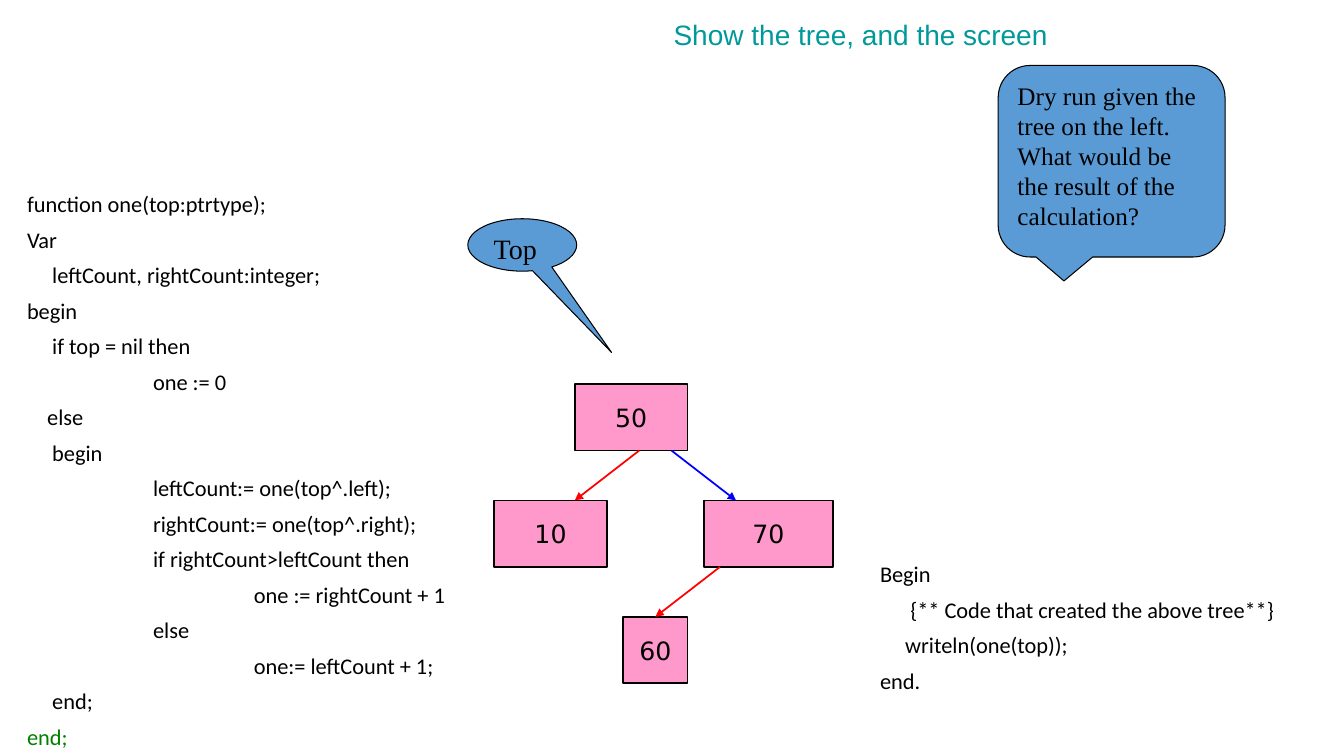
"""Builds a slide that asks for a dry run of a recursive tree function."""
from pptx import Presentation, util as u
from pptx.dml.color import RGBColor
from pptx.enum import shapes, text
from pptx.oxml import parse_xml
from pptx.oxml.ns import nsdecls

HUES = {"ink": "000000", "teal": "009999", "green": "008000", "sky": "5B9BD5",
        "pink": "FF99CC", "red": "FF0000", "blue": "0000FF"}
COL, ROW = 0.16, 0.165
LEFT, TOP = 4.9, 3.81


def style(par, face, size, hue="ink"):
    """Set the font of a paragraph."""
    par.font.name, par.font.size = face, u.Pt(size)
    par.font.color.rgb = RGBColor.from_string(HUES[hue])


def draw(kind, box, hue, width, lines, face, size):
    """Add a filled shape with its text and return it."""
    form = slide.shapes.add_shape(kind, *[u.Inches(n) for n in box])
    form.shadow.inherit = False
    form.fill.solid()
    form.fill.fore_color.rgb = RGBColor.from_string(HUES[hue])
    form.line.color.rgb = RGBColor.from_string(HUES["ink"])
    form.line.width = u.Pt(width)
    form.text_frame.text = "\n".join(lines)
    form.text_frame.vertical_anchor = text.MSO_ANCHOR.TOP
    for par in form.text_frame.paragraphs:
        par.alignment = text.PP_ALIGN.LEFT
        style(par, face, size)
    return form


deck = Presentation()
deck.slide_width, deck.slide_height = u.Inches(13.33), u.Inches(7.5)
slide = deck.slides.add_slide(deck.slide_layouts[5])

title = slide.shapes.title
title.left, title.top, title.width, title.height = [
    u.Inches(n) for n in (6.58, 0.12, 4.75, 0.43)]
title.text_frame.text = "Show the tree, and the screen"
title.text_frame.vertical_anchor = text.MSO_ANCHOR.TOP
head = title.text_frame.paragraphs[0]
head.alignment = text.PP_ALIGN.LEFT
style(head, "Arial", 20, "teal")

code = [
    (0, "function one(top:ptrtype);"),
    (0, "Var"),
    (0.25, "leftCount, rightCount:integer;"),
    (0, "begin"),
    (0.25, "if top = nil then"),
    (1.25, "one := 0"),
    (0.2, "else"),
    (0.25, "begin"),
    (1.25, "leftCount:= one(top^.left);"),
    (1.25, "rightCount:= one(top^.right);"),
    (1.25, "if rightCount>leftCount then"),
    (2.25, "one := rightCount + 1"),
    (1.25, "else"),
    (2.25, "one:= leftCount + 1;"),
    (0.25, "end;"),
    (0, "end;"),
]
main = [
    (0, "Begin"),
    (0.3, "{** Code that created the above tree**}"),
    (0.25, "writeln(one(top));"),
    (0, "end."),
]
for box, lines in [((0.17, 1.89, 5.54, 5.61), code), ((8.63, 5.56, 4.7, 1.84), main)]:
    frame = slide.shapes.add_textbox(*[u.Inches(n) for n in box]).text_frame
    frame.word_wrap = True
    frame.text = "\n".join(line for _, line in lines)
    for par, (dent, line) in zip(frame.paragraphs, lines):
        par._p.get_or_add_pPr().set("marL", str(u.Inches(dent)))
        par.line_spacing, par.space_before = 0.8, u.Pt(10)
        style(par, "Calibri", 16)
style(slide.shapes[1].text_frame.paragraphs[-1], "Calibri", 16, "green")

nodes = [("60", 8, 14, 4), ("70", 13, 7, 8), ("50", 5, 0, 7), ("10", 0, 7, 7)]
for label, col, row, wide in nodes:
    box = LEFT + col * COL, TOP + row * ROW, wide * COL, 4 * ROW
    node = draw(shapes.MSO_SHAPE.RECTANGLE, box, "pink", 1.25, [label], "DejaVu Sans", 18)
    node.text_frame.word_wrap = False
    node.text_frame.vertical_anchor = text.MSO_ANCHOR.MIDDLE
    node.text_frame.paragraphs[0].alignment = text.PP_ALIGN.CENTER

links = [(14, 11, 10, "red"), (11, 4, 15, "blue"), (9, 4, 5, "red")]
for start, row, end, hue in links:
    ends = LEFT + start * COL, TOP + row * ROW, LEFT + end * COL, TOP + (row + 3) * ROW
    link = slide.shapes.add_connector(
        shapes.MSO_CONNECTOR.STRAIGHT, *[u.Inches(n) for n in ends])
    link.line.color.rgb = RGBColor.from_string(HUES[hue])
    link.line.width = u.Pt(1.25)
    link.line._get_or_add_ln().append(
        parse_xml(f'<a:tailEnd {nsdecls("a")} type="triangle"/>'))
    link._element.spPr.append(parse_xml(f'<a:effectLst {nsdecls("a")}/>'))

calls = [
    (shapes.MSO_SHAPE.ROUNDED_RECTANGULAR_CALLOUT, (9.9, 0.65, 2.25, 1.9),
     (-0.21, 0.625, 0.167), 18,
     ["Dry run given the tree on the left.",
      "What would be the result of the calculation?"]),
    (shapes.MSO_SHAPE.OVAL_CALLOUT, (4.64, 2.17, 1.08, 0.52), (0.82, 2.05), 20, ["Top"]),
]
for kind, box, bends, size, lines in calls:
    call = draw(kind, box, "sky", 0.75, lines, "Times New Roman", size)
    for spot, bend in enumerate(bends):
        call.adjustments[spot] = bend

deck.save("out.pptx")
